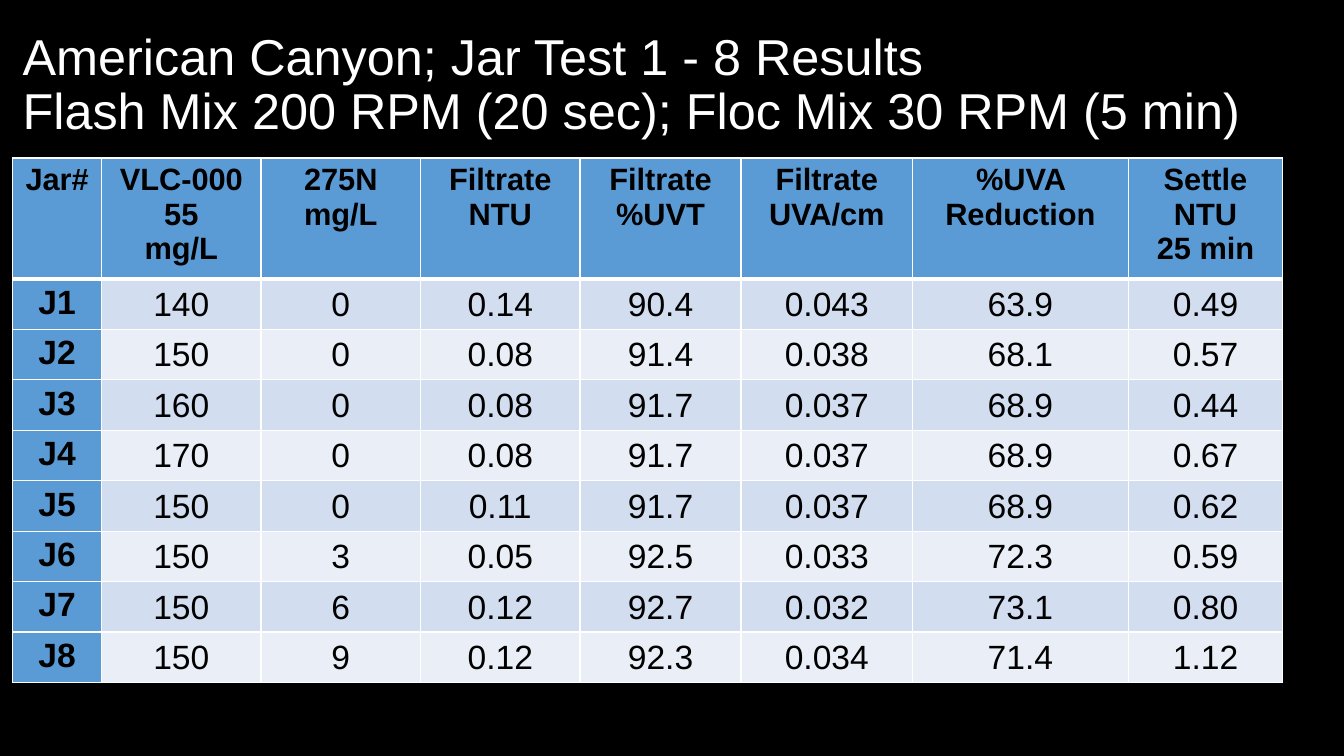
from lxml import etree
from pptx import Presentation
from pptx.dml.color import RGBColor
from pptx.enum.text import MSO_ANCHOR, PP_ALIGN
from pptx.oxml.ns import qn
from pptx.util import Cm, Pt

MIDDLE, TOP = MSO_ANCHOR.MIDDLE, MSO_ANCHOR.TOP
CENTER = PP_ALIGN.CENTER
COLORS = {"black": "000000", "white": "FFFFFF", "blue": "5B9BD5",
          "band": "D2DEEF", "light": "EAEFF7"}
RGB = {name: RGBColor.from_string(value) for name, value in COLORS.items()}


def set_font(p, size, color, bold=False):
    p.font.name = "Arial"
    p.font.size = Pt(size)
    p.font.bold = bold
    p.font.color.rgb = RGB[color]


def add_border(cell, side, width):
    ln = etree.SubElement(cell._tc.get_or_add_tcPr(), qn("a:" + side), w=str(Pt(width)))
    fill = etree.SubElement(ln, qn("a:solidFill"))
    etree.SubElement(fill, qn("a:srgbClr"), val=COLORS["white"])


prs = Presentation()
prs.slide_width, prs.slide_height = Cm(33.87), Cm(19.05)
s = prs.slides.add_slide(prs.slide_layouts[6])
s.background.fill.solid()
s.background.fill.fore_color.rgb = RGB["black"]

title = s.shapes.add_textbox(Cm(0.32), Cm(0.33), Cm(33.1), Cm(3.68))
tf = title.text_frame
tf.word_wrap = True
tf.vertical_anchor = MIDDLE
p = tf.paragraphs[0]
p.text = "American Canyon; Jar Test 1 - 8 Results\vFlash Mix 200 RPM (20 sec); Floc Mix 30 RPM (5 min)"
p.line_spacing = 0.9
set_font(p, 36, "white")

rows = [
    ["Jar#", "VLC-00055\nmg/L", "275N\nmg/L", "Filtrate\nNTU", "Filtrate\n%UVT",
     "Filtrate\nUVA/cm", "%UVA Reduction", "Settle\nNTU\n25 min"],
    ["J1", "140", "0", "0.14", "90.4", "0.043", "63.9", "0.49"],
    ["J2", "150", "0", "0.08", "91.4", "0.038", "68.1", "0.57"],
    ["J3", "160", "0", "0.08", "91.7", "0.037", "68.9", "0.44"],
    ["J4", "170", "0", "0.08", "91.7", "0.037", "68.9", "0.67"],
    ["J5", "150", "0", "0.11", "91.7", "0.037", "68.9", "0.62"],
    ["J6", "150", "3", "0.05", "92.5", "0.033", "72.3", "0.59"],
    ["J7", "150", "6", "0.12", "92.7", "0.032", "73.1", "0.80"],
    ["J8", "150", "9", "0.12", "92.3", "0.034", "71.4", "1.12"],
]
widths = [2.24, 4.02, 4.02, 4.02, 4.06, 4.32, 5.44, 3.89]
row_height = 1.04

table = s.shapes.add_table(len(rows), len(widths), Cm(0.32), Cm(3.98),
                           Cm(sum(widths)), Cm(row_height * len(rows))).table
for column, width in zip(table.columns, widths):
    column.width = Cm(width)

for i, values in enumerate(rows):
    for j, value in enumerate(values):
        cell = table.cell(i, j)
        heading = i == 0 or j == 0
        add_border(cell, "lnL", 1)
        add_border(cell, "lnR", 1)
        add_border(cell, "lnT", 3 if i == 1 else 1)
        add_border(cell, "lnB", 3 if i == 0 else 1)
        cell.fill.solid()
        cell.fill.fore_color.rgb = RGB["blue" if heading else "band" if i % 2 else "light"]
        cell.vertical_anchor = TOP if heading else MIDDLE
        if not heading:
            cell.margin_left = cell.margin_right = cell.margin_top = Cm(0.03)
            cell.margin_bottom = 0
        cell.text = value
        for p in cell.text_frame.paragraphs:
            p.alignment = CENTER
            set_font(p, 22 if i == 0 else 24, "black", heading)

prs.save("out.pptx")
